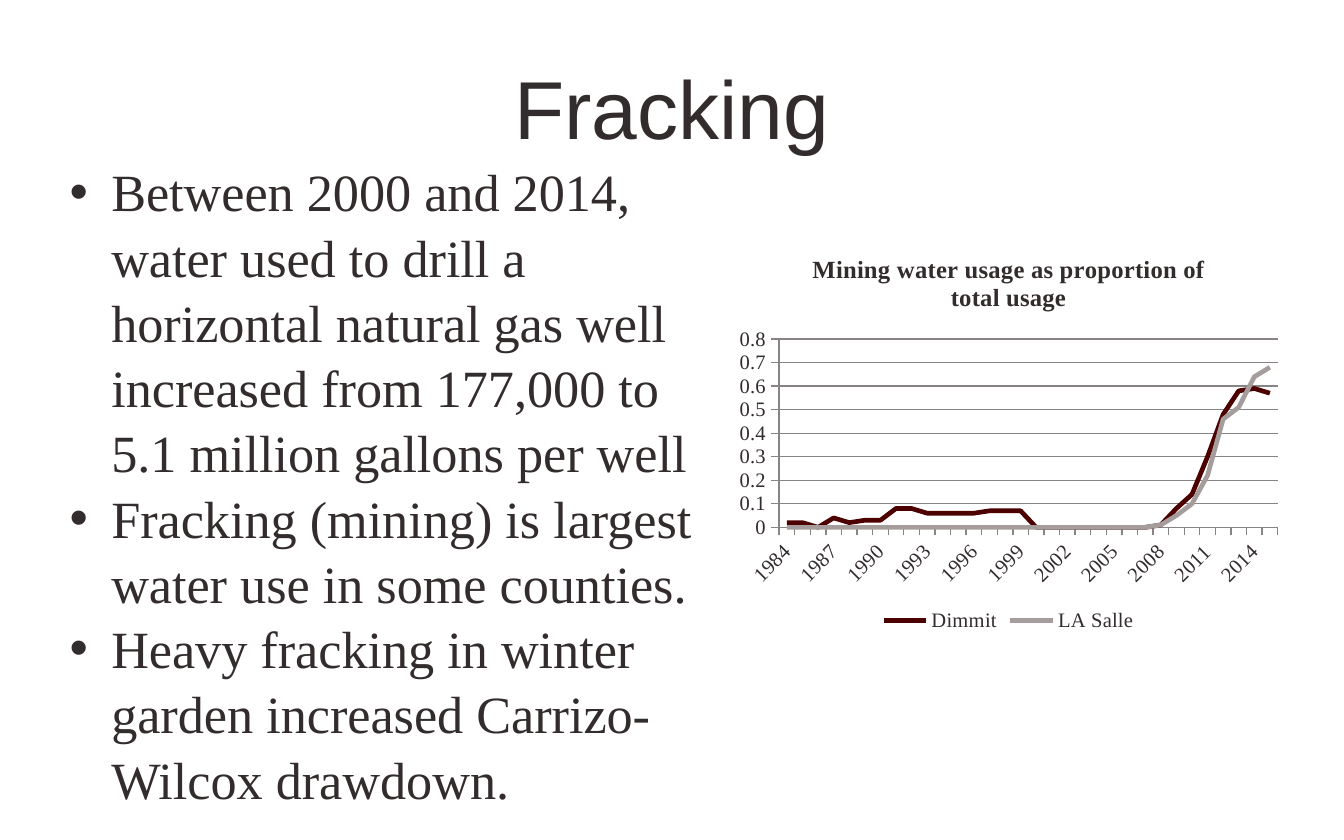
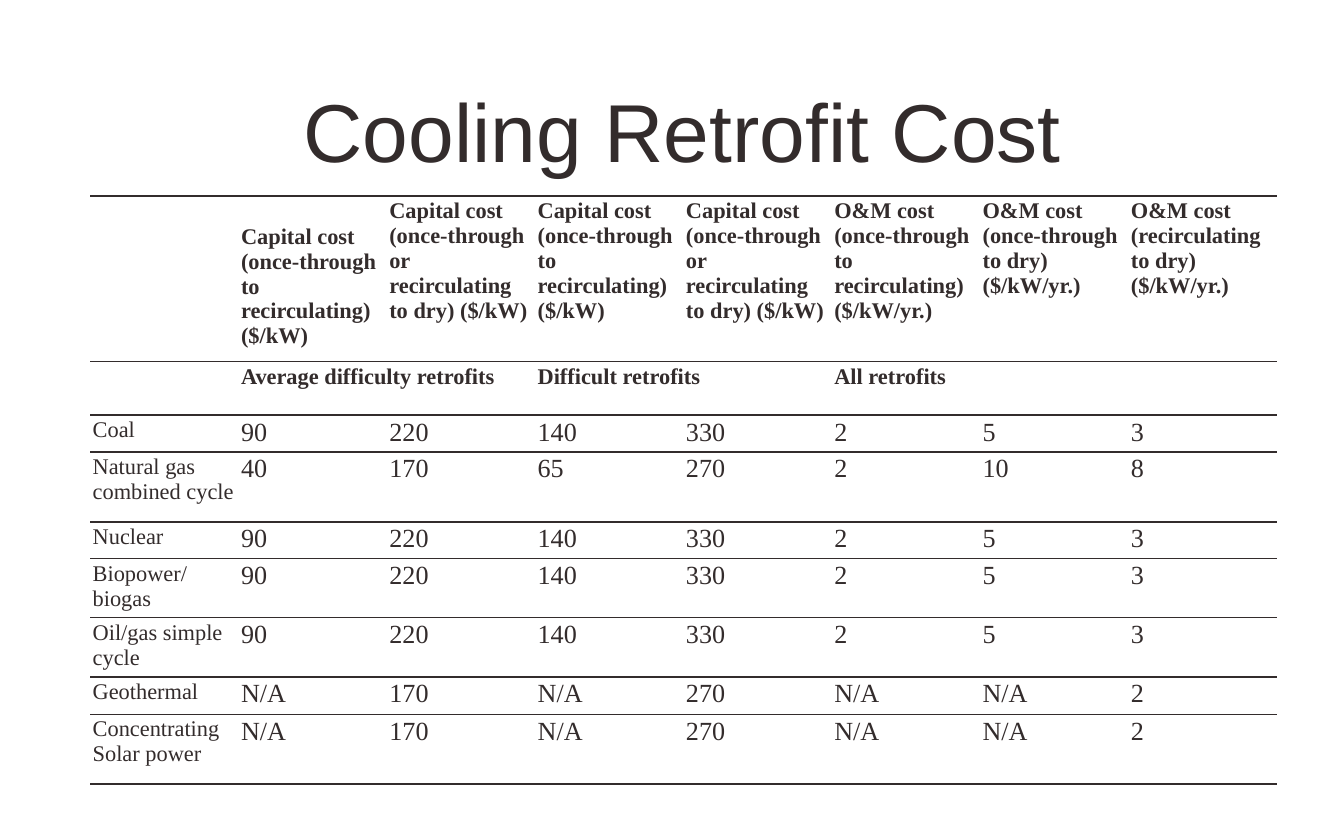
from dataclasses import dataclass
from typing import NamedTuple

from lxml import etree
from pptx import Presentation
from pptx import util as u
from pptx.chart.data import CategoryChartData
from pptx.dml.color import RGBColor
from pptx.enum import chart as ch, text
from pptx.oxml import ns

PX = 9144


def px(n: int) -> u.Emu:
    return u.Emu(n * PX)


@dataclass(frozen=True)
class Theme:
    ink: str = "332C2C"
    grid: str = "888484"
    dimmit: str = "4C0000"
    la_salle: str = "A59D9B"
    title_font: str = "Arial"
    body_font: str = "Times New Roman"
    title: float = 44
    body: float = 28
    chart_title: float = 13.2
    chart: float = 11
    cost: float = 14
    label: float = 12


T = Theme()


class Box(NamedTuple):
    x: int
    y: int
    w: int
    h: int

    def emu(self) -> tuple:
        return tuple(px(n) for n in self)


class Series(NamedTuple):
    name: str
    color: str
    values: tuple


class CostRow(NamedTuple):
    plant: str
    height: int
    costs: tuple


class Group(NamedTuple):
    label: str
    first: int
    last: int


BULLETS = (
    "Between 2000 and 2014, water used to drill a horizontal natural gas well "
    "increased from 177,000 to 5.1 million gallons per well",
    "Fracking (mining) is largest water use in some counties.",
    "Heavy fracking in winter garden increased Carrizo-Wilcox drawdown.",
)

YEARS = [str(year) for year in range(1984, 2016)]
USAGE = (
    Series("Dimmit", T.dimmit, (
        0.02, 0.02, 0, 0.04, 0.02, 0.03, 0.03, 0.08, 0.08, 0.06, 0.06, 0.06,
        0.06, 0.07, 0.07, 0.07, *[0] * 8,
        0.01, 0.08, 0.14, 0.3, 0.48, 0.58, 0.59, 0.57)),
    Series("LA Salle", T.la_salle, (
        *[0] * 24, 0.01, 0.05, 0.1, 0.22, 0.46, 0.51, 0.64, 0.68)),
)

TO_RECIRCULATING = "Capital cost (once-through to recirculating) ($/kW)"
TO_DRY = "Capital cost (once-through or recirculating to dry) ($/kW)"
HEADERS = (
    TO_RECIRCULATING, TO_DRY, TO_RECIRCULATING, TO_DRY,
    "O&M cost (once-through to recirculating) ($/kW/yr.)",
    "O&M cost (once-through to dry) ($/kW/yr.)",
    "O&M cost (recirculating to dry) ($/kW/yr.)",
)
GROUPS = (
    Group("Average difficulty retrofits", 1, 2),
    Group("Difficult retrofits", 3, 4),
    Group("All retrofits", 5, 7),
)
STANDARD = (90, 220, 140, 330, 2, 5, 3)
DRY_ONLY = ("N/A", 170, "N/A", 270, "N/A", "N/A", 2)
COST_ROWS = (
    CostRow("Coal", 16, STANDARD),
    CostRow("Natural gas combined cycle", 52, (40, 170, 65, 270, 2, 10, 8)),
    CostRow("Nuclear", 16, STANDARD),
    CostRow("Biopower/biogas", 40, STANDARD),
    CostRow("Oil/gas simple cycle", 40, STANDARD),
    CostRow("Geothermal", 28, DRY_ONLY),
    CostRow("Concentrating Solar power", 52, DRY_ONLY),
)
HEADER_HEIGHTS = (111, 40)


def style(font, size: float, name: str = T.body_font, bold: bool = False) -> None:
    font.name = name
    font.size = u.Pt(size)
    font.bold = bold
    font.color.rgb = RGBColor.from_string(T.ink)


def add_text(s, box: Box):
    tf = s.shapes.add_textbox(*box.emu()).text_frame
    tf.word_wrap = True
    return tf


def add_title(s, title: str, box: Box) -> None:
    tf = add_text(s, box)
    tf.vertical_anchor = text.MSO_ANCHOR.MIDDLE
    p = tf.paragraphs[0]
    p.text = title
    p.alignment = text.PP_ALIGN.CENTER
    style(p.runs[0].font, T.title, T.title_font)


def add_bullets(s, items: tuple, box: Box) -> None:
    tf = add_text(s, box)
    tf.text = "\n".join(items)
    for p in tf.paragraphs:
        p.line_spacing = 1.04
        pPr = p._p.get_or_add_pPr()
        pPr.set("marL", str(px(31)))
        pPr.set("indent", str(px(-31)))
        etree.SubElement(pPr, ns.qn("a:buFont")).set("typeface", T.title_font)
        etree.SubElement(pPr, ns.qn("a:buChar")).set("char", "•")
        style(p.runs[0].font, T.body)


def add_usage_chart(s, box: Box) -> None:
    data = CategoryChartData()
    data.categories = YEARS
    for series in USAGE:
        data.add_series(series.name, series.values)
    chart = s.shapes.add_chart(ch.XL_CHART_TYPE.LINE, *box.emu(), data).chart
    style(chart.font, T.chart)
    tf = chart.chart_title.text_frame
    tf.text = "Mining water usage as proportion of total usage"
    style(tf.paragraphs[0].runs[0].font, T.chart_title, bold=True)
    chart.has_legend = True
    chart.legend.position = ch.XL_LEGEND_POSITION.BOTTOM
    chart.legend.include_in_layout = False

    plot = chart.plots[0]
    plot.vary_by_categories = False
    for line, series in zip(plot.series, USAGE):
        line.smooth = False
        line.marker.style = ch.XL_MARKER_STYLE.NONE
        line.format.line.width = u.Pt(2.5)
        line.format.line.color.rgb = RGBColor.from_string(series.color)

    years, shares = chart.category_axis, chart.value_axis
    shares.minimum_scale, shares.maximum_scale, shares.major_unit = 0, 0.8, 0.1
    shares.has_major_gridlines = True
    for axis in (years, shares):
        axis.major_tick_mark = ch.XL_TICK_MARK.OUTSIDE
        style(axis.tick_labels.font, T.chart)
    for fmt in (years.format, shares.format, shares.major_gridlines.format):
        fmt.line.width = u.Pt(0.75)
        fmt.line.color.rgb = RGBColor.from_string(T.grid)
    years._element.find(f".//{ns.qn('a:bodyPr')}").set("rot", "-2700000")


def set_borders(cell) -> None:
    tcPr = cell._tc.get_or_add_tcPr()
    for side in ("lnL", "lnR", "lnT", "lnB"):
        ln = etree.SubElement(tcPr, ns.qn(f"a:{side}"), w=str(u.Pt(1)))
        if side in ("lnL", "lnR"):
            etree.SubElement(ln, ns.qn("a:noFill"))
        else:
            fill = etree.SubElement(ln, ns.qn("a:solidFill"))
            etree.SubElement(fill, ns.qn("a:srgbClr"), val=T.ink)


def fill_cell(cell, value, size: float, bold: bool = False) -> None:
    cell.text = str(value)
    for r in cell.text_frame.paragraphs[0].runs:
        style(r.font, size, bold=bold)


def add_cost_table(s, box: Box) -> None:
    heights = (*HEADER_HEIGHTS, *(row.height for row in COST_ROWS))
    n_cols = len(HEADERS) + 1
    table = s.shapes.add_table(len(heights), n_cols, *box.emu()).table
    table.first_row = table.horz_banding = False
    for column in table.columns:
        column.width = u.Emu(px(box.w) // n_cols)
    for row, height in zip(table.rows, heights):
        row.height = px(height)
    for cell in table.iter_cells():
        cell.margin_left = cell.margin_right = px(2)
        cell.margin_top = cell.margin_bottom = px(2)
        set_borders(cell)
        cell.fill.background()

    for c, header in enumerate(HEADERS, 1):
        fill_cell(table.cell(0, c), header, T.label, True)
    table.cell(0, 1).margin_top = px(21)
    for group in GROUPS:
        cell = table.cell(1, group.first)
        cell.merge(table.cell(1, group.last))
        fill_cell(cell, group.label, T.label, True)
    for i, row in enumerate(COST_ROWS, len(HEADER_HEIGHTS)):
        fill_cell(table.cell(i, 0), row.plant, T.label)
        for c, cost in enumerate(row.costs, 1):
            fill_cell(table.cell(i, c), cost, T.cost)


def main() -> None:
    prs = Presentation()
    prs.slide_width, prs.slide_height = px(1000), px(625)
    blank = prs.slide_layouts[6]

    s = prs.slides.add_slide(blank)
    add_title(s, "Fracking", Box(50, 30, 900, 99))
    add_bullets(s, BULLETS, Box(42, 112, 500, 512))
    add_usage_chart(s, Box(542, 174, 417, 300))

    s = prs.slides.add_slide(blank)
    add_title(s, "Cooling Retrofit Cost", Box(58, 47, 900, 99))
    add_cost_table(s, Box(67, 146, 883, 439))

    prs.save("out.pptx")


if __name__ == "__main__":
    main()
